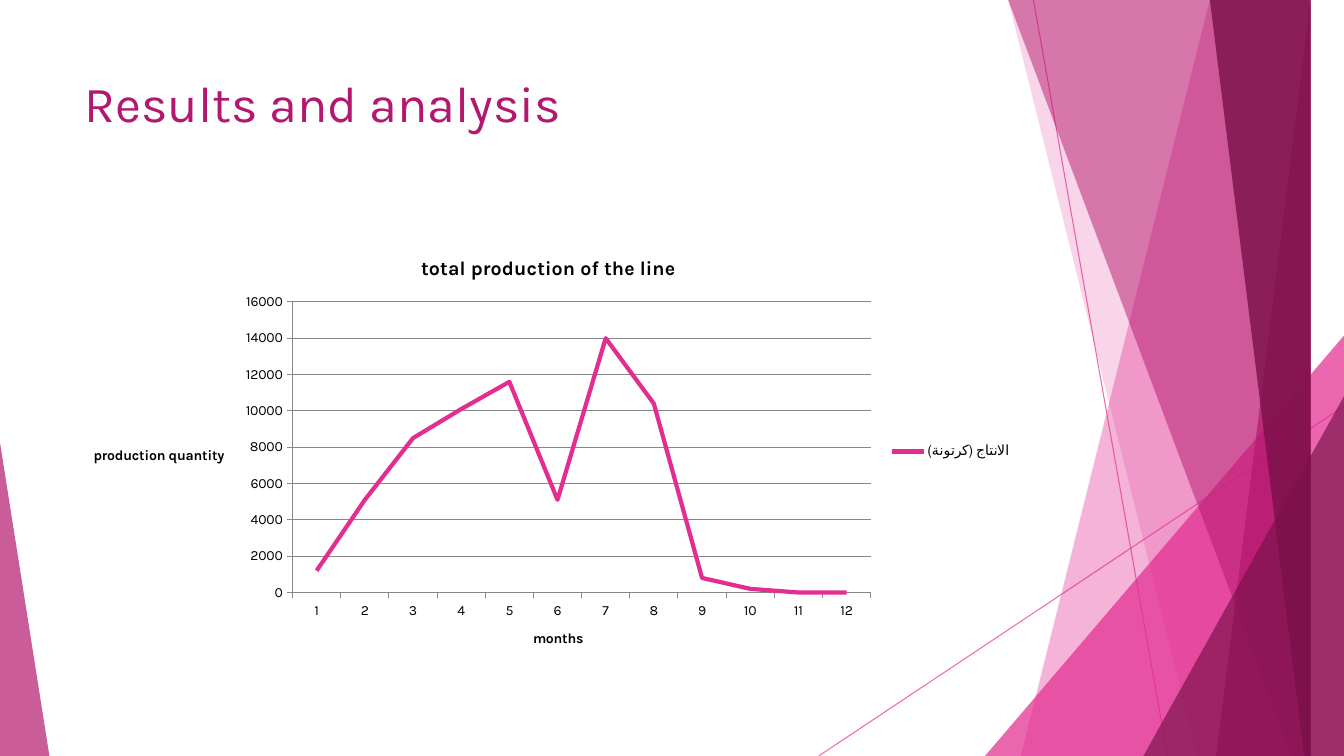
"""Build the results slide: a line chart of monthly production beside layered shards."""
from lxml import etree
from pptx import Presentation
from pptx.chart.data import CategoryChartData
from pptx.dml.color import RGBColor
from pptx.enum.chart import XL_CHART_TYPE, XL_LEGEND_POSITION, XL_MARKER_STYLE, XL_TICK_MARK
from pptx.enum.shapes import MSO_CONNECTOR, MSO_SHAPE
from pptx.enum.text import MSO_ANCHOR
from pptx.oxml.ns import qn
from pptx.util import Inches, Pt

LINE = XL_CHART_TYPE.LINE
RIGHT = XL_LEGEND_POSITION.RIGHT
BARE = XL_MARKER_STYLE.NONE
OUT, NONE = XL_TICK_MARK.OUTSIDE, XL_TICK_MARK.NONE
STRAIGHT = MSO_CONNECTOR.STRAIGHT
TRIANGLE = MSO_SHAPE.ISOSCELES_TRIANGLE
TOP = MSO_ANCHOR.TOP

WIDE, HIGH = 13.33, 7.5
PINK, ROSE, PLUM, GREY = "E32D91", "B4186E", "781049", "878787"
FONT = "Karla"


def paint(fill, tone, alpha=100):
    fill.solid()
    fill.fore_color.rgb = RGBColor.from_string(tone)
    if alpha < 100:
        hue = fill._xPr.find(qn("a:solidFill"))[0]
        etree.SubElement(hue, qn("a:alpha")).set("val", str(alpha * 1000))


def label(item, text, size):
    frame = item.text_frame
    frame.text = text
    font = frame.paragraphs[0].font
    font.name, font.size, font.bold = FONT, Pt(size), True
    paint(font.fill, "000000")


deck = Presentation()
deck.slide_width, deck.slide_height = Inches(WIDE), Inches(HIGH)
slide = deck.slides.add_slide(deck.slide_layouts[6])
shapes = slide.shapes

for ends in [(10.25, 0, 11.58, HIGH), (WIDE, 4.03, 8.12, HIGH)]:
    ray = shapes.add_connector(STRAIGHT, *map(Inches, ends))
    ray.line.width = Pt(0.75)
    paint(ray.line.fill, PINK, 70)
    etree.SubElement(ray._element.spPr, qn("a:effectLst"))

# (top x, foot x) for a wedge, (left, top, width, apex) for a triangle
shards = [
    ((12.28, 10.04), PINK, 36),
    ((10.5, 11.83), PINK, 20),
    ((9.77, 3.33, 3.56, 1), PINK, 72),
    ((10.21, 12.91), ROSE, 50),
    ((13.03, 11.92), ROSE, 70),
    ((11.96, 13.18), PLUM, 80),
    ((11.34, 3.93, 1.99, 1), PLUM, 66),
    ((0, 4.39, 0.49, 0), ROSE, 70),
]
for form, tone, alpha in shards:
    if len(form) == 2:
        head, foot = form
        path = shapes.build_freeform(head, 0, scale=Inches(1))
        path.add_line_segments([(WIDE, 0), (WIDE, HIGH), (foot, HIGH)])
        shard = path.convert_to_shape()
    else:
        left, top, width, apex = form
        shard = shapes.add_shape(TRIANGLE, Inches(left), Inches(top),
                                 Inches(width), Inches(HIGH - top))
        shard.adjustments[0] = apex
    shard.shadow.inherit = False
    shard.line.fill.background()
    paint(shard.fill, tone, alpha)

title = shapes.add_textbox(Inches(0.74), Inches(0.67), Inches(9.4), Inches(1.44))
frame = title.text_frame
frame.word_wrap = True
frame.vertical_anchor = TOP
para = frame.paragraphs[0]
para.text = "Results and analysis"
para.font.name, para.font.size = FONT, Pt(36)
paint(para.font.fill, ROSE)

data = CategoryChartData()
data.categories = [str(month) for month in range(1, 13)]
data.add_series("الانتاج (كرتونة)", [1200, 5100, 8500, 10100, 11600, 5100,
                                     14000, 10400, 800, 200, 0, 0])
chart = shapes.add_chart(LINE, Inches(0.74), Inches(2.36),
                         Inches(9.4), Inches(4.24), data).chart
chart.font.name, chart.font.size = FONT, Pt(10)
paint(chart.font.fill, "000000")
chart.has_title = True
label(chart.chart_title, "total production of the line", 14)
chart.has_legend = True
chart.legend.position = RIGHT
chart.legend.include_in_layout = False

months, amount = chart.category_axis, chart.value_axis
for axis, text in [(months, "months"), (amount, "production quantity")]:
    label(axis.axis_title, text, 10)
    axis.major_tick_mark, axis.minor_tick_mark = OUT, NONE
    axis.format.line.width = Pt(0.75)
    paint(axis.format.line.fill, GREY)
amount.axis_title.text_frame._txBody.bodyPr.set("rot", "0")
amount.minimum_scale, amount.maximum_scale, amount.major_unit = 0, 16000, 2000
amount.has_major_gridlines = True
grid = amount.major_gridlines.format.line
grid.width = Pt(0.75)
paint(grid.fill, GREY)

plot = chart.plots[0]
plot.vary_by_categories = False
series = plot.series[0]
series.smooth = False
series.marker.style = BARE
series.format.line.width = Pt(3)
paint(series.format.line.fill, PINK)

area = chart._chartSpace.chart.plotArea
for old in area.findall(qn("c:layout")):
    area.remove(old)
layout = etree.Element(qn("c:layout"))
area.insert(0, layout)
manual = etree.SubElement(layout, qn("c:manualLayout"))
for tag, val in [("layoutTarget", "inner"), ("xMode", "edge"), ("yMode", "edge"),
                 ("x", 0.23), ("y", 0.15), ("w", 0.61), ("h", 0.68)]:
    etree.SubElement(manual, qn("c:" + tag)).set("val", str(val))

deck.save("out.pptx")
